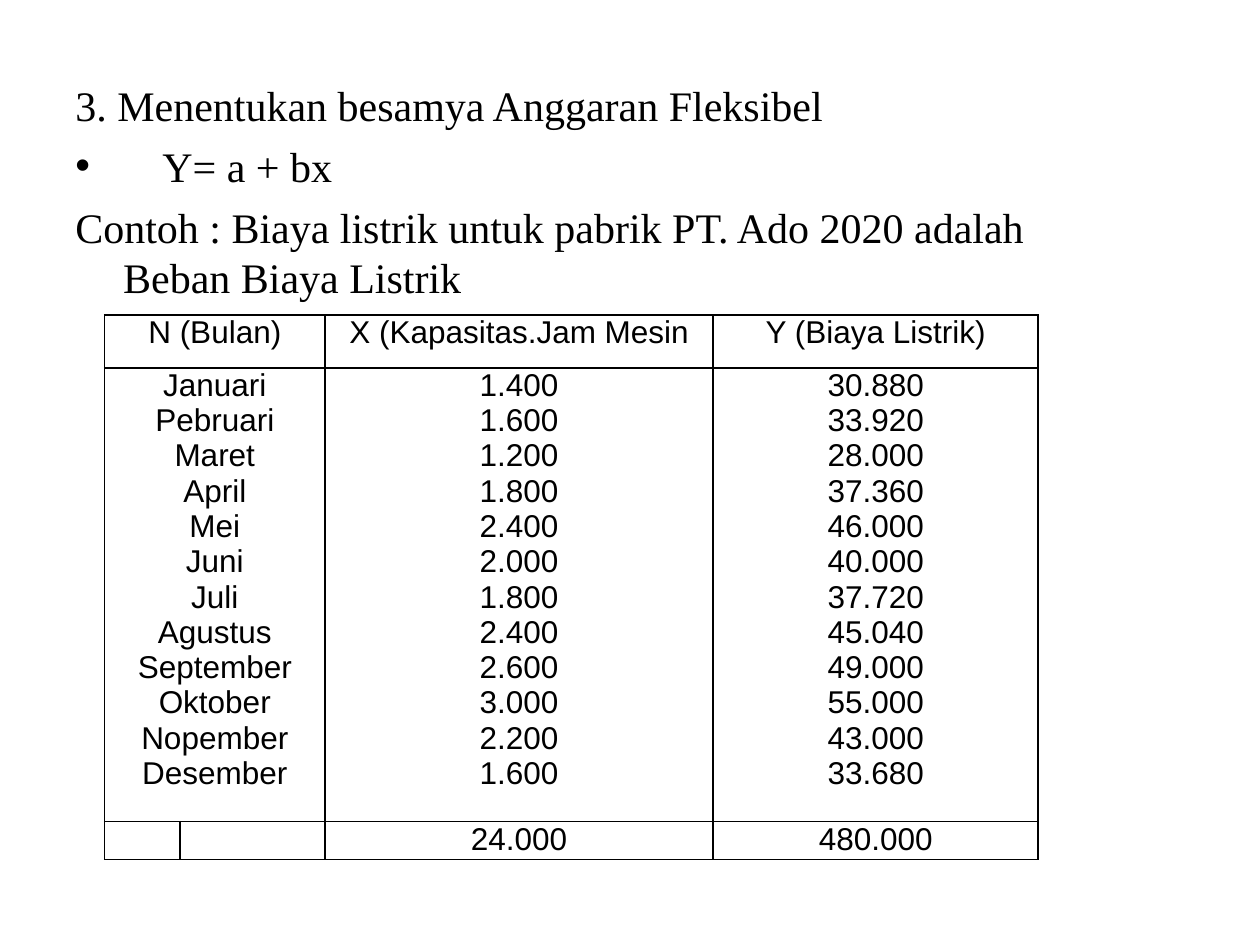
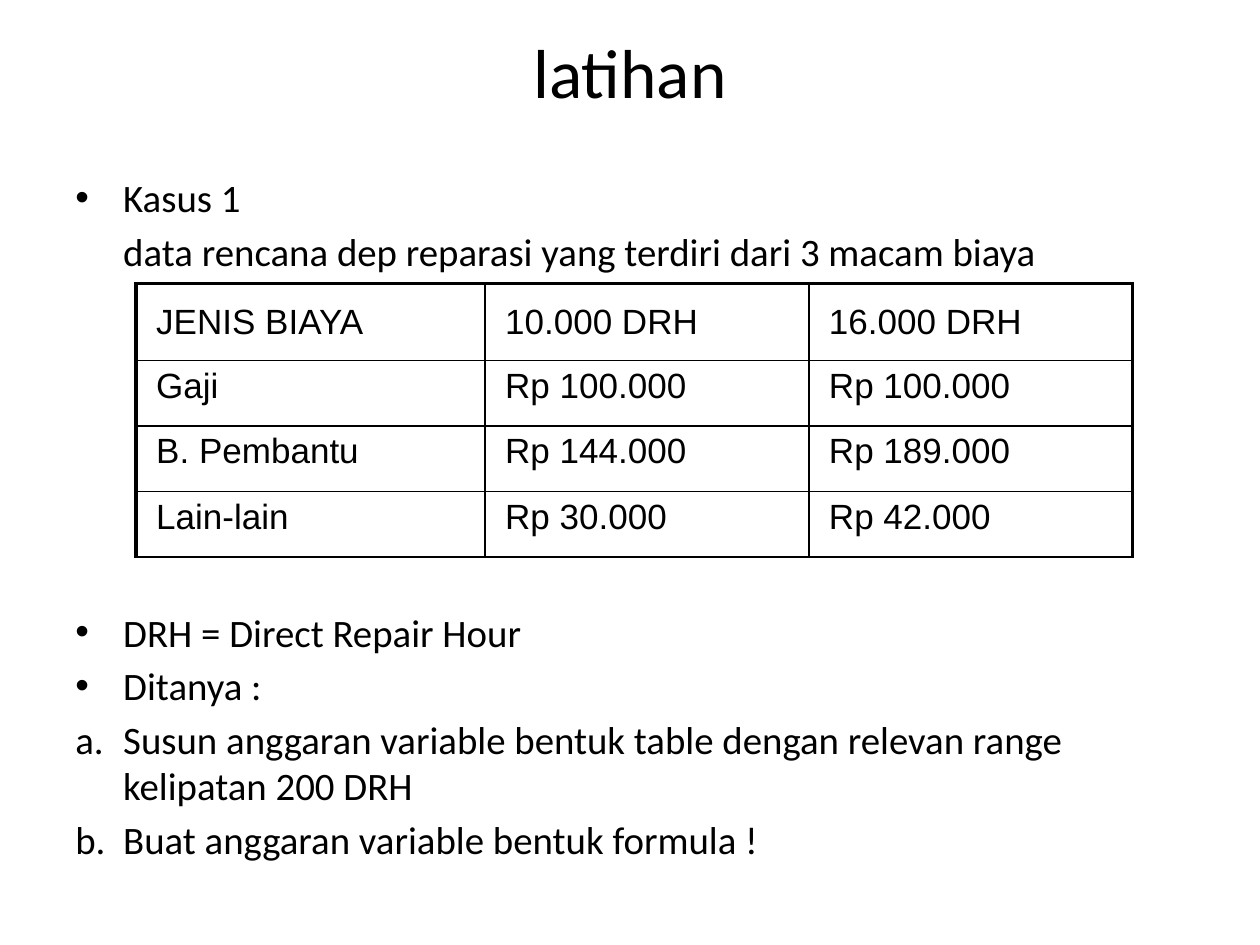
from lxml import etree
from pptx import Presentation
from pptx.dml.color import RGBColor
from pptx.enum.text import MSO_ANCHOR, PP_ALIGN
from pptx.oxml.ns import qn
from pptx.util import Inches, Pt

# Content: each body line is (text, bulleted, left margin, space before)
BUDGET_LINES = [
    ("3. Menentukan besamya Anggaran Fleksibel", False, 0.38, 6),
    ("Y= a + bx", True, 0.69, 6),
    ("Contoh : Biaya listrik untuk pabrik PT. Ado 2020 adalah\vBeban Biaya Listrik", False, 0.38, 6),
]
BUDGET_HEADER = ["N (Bulan)", "X (Kapasitas.Jam Mesin", "Y (Biaya Listrik)"]
MONTHS = [
    ("Januari", "1.400", "30.880"),
    ("Pebruari", "1.600", "33.920"),
    ("Maret", "1.200", "28.000"),
    ("April", "1.800", "37.360"),
    ("Mei", "2.400", "46.000"),
    ("Juni", "2.000", "40.000"),
    ("Juli", "1.800", "37.720"),
    ("Agustus", "2.400", "45.040"),
    ("September", "2.600", "49.000"),
    ("Oktober", "3.000", "55.000"),
    ("Nopember", "2.200", "43.000"),
    ("Desember", "1.600", "33.680"),
]
TOTALS = ["24.000", "480.000"]

EXERCISE_TITLE = "latihan"
TABLE_GAP = 191  # points left free for the cost table
EXERCISE_LINES = [
    ("Kasus 1", True, 0.38, 4),
    ("\tdata rencana dep reparasi yang terdiri dari 3 macam biaya", False, 0.38, 4),
    ("DRH = Direct Repair Hour", True, 0.38, TABLE_GAP),
    ("Ditanya :", True, 0.38, 4),
    ("a.\tSusun anggaran variable bentuk table dengan relevan range kelipatan 200 DRH", False, 0.38, 4),
    ("b.\tBuat anggaran variable bentuk formula !", False, 0.38, 4),
]
COSTS = [
    ("JENIS BIAYA", "10.000 DRH", "16.000 DRH"),
    ("Gaji", "Rp 100.000", "Rp 100.000"),
    ("B. Pembantu", "Rp 144.000", "Rp 189.000"),
    ("Lain-lain", "Rp 30.000", "Rp 42.000"),
]

# Shared style
BLACK = RGBColor(0x00, 0x00, 0x00)
WHITE = RGBColor(0xFF, 0xFF, 0xFF)
SERIF, SANS, TABLE_FONT = "Times New Roman", "Calibri", "Arial"
CENTER, JUSTIFY = PP_ALIGN.CENTER, PP_ALIGN.JUSTIFY
TOP, MIDDLE = MSO_ANCHOR.TOP, MSO_ANCHOR.MIDDLE
THIN, THICK = 1, 2.25


def style_runs(p, font, size):
    for r in p.runs:
        r.font.name = font
        r.font.size = Pt(size)
        r.font.color.rgb = BLACK


def set_indent(p, margin, hanging):
    pPr = p._p.get_or_add_pPr()
    pPr.set("marL", str(Inches(margin)))
    pPr.set("indent", str(-Inches(hanging)))
    return pPr


def add_text(slide, left, top, width, height):
    sp = slide.shapes.add_textbox(Inches(left), Inches(top), Inches(width), Inches(height))
    sp.text_frame.word_wrap = True
    return sp.text_frame


def add_body(slide, top, height, lines, font, size):
    tf = add_text(slide, 0.5, top, 9, height)
    for i, (text, bulleted, margin, before) in enumerate(lines):
        p = tf.paragraphs[0] if i == 0 else tf.add_paragraph()
        p.text = text
        p.space_before = Pt(before)
        style_runs(p, font, size)
        pPr = set_indent(p, margin, margin)
        if bulleted:
            etree.SubElement(pPr, qn("a:buFont")).set("typeface", "Arial")
            etree.SubElement(pPr, qn("a:buChar")).set("char", "•")


def set_borders(cell, widths):
    """Widths are points for left, right, top and bottom."""
    tcPr = cell._tc.get_or_add_tcPr()
    for i, (side, width) in enumerate(zip("LRTB", widths)):
        ln = etree.Element(qn(f"a:ln{side}"), w=str(Pt(width)))
        fill = etree.SubElement(ln, qn("a:solidFill"))
        etree.SubElement(fill, qn("a:srgbClr")).set("val", str(BLACK))
        tcPr.insert(i, ln)


def add_grid(slide, left, top, cols, rows):
    frame = slide.shapes.add_table(
        len(rows), len(cols), Inches(left), Inches(top), Inches(sum(cols)), Inches(sum(rows)))
    table = frame.table
    table.first_row = table.horz_banding = False
    for column, width in zip(table.columns, cols):
        column.width = Inches(width)
    for row, height in zip(table.rows, rows):
        row.height = Inches(height)
    for cell in table.iter_cells():
        cell.fill.background()
    return table


def fill_cell(cell, text, size, align, anchor=TOP):
    cell.text_frame.text = text
    cell.vertical_anchor = anchor
    for p in cell.text_frame.paragraphs:
        p.alignment = align
        style_runs(p, TABLE_FONT, size)


def add_slide(prs):
    slide = prs.slides.add_slide(prs.slide_layouts[6])
    slide.background.fill.solid()
    slide.background.fill.fore_color.rgb = WHITE
    return slide


def build_budget(prs):
    s = add_slide(prs)
    add_body(s, 0.58, 6.12, BUDGET_LINES, SERIF, 24)

    # Monthly table: the month column spans two, the totals row does not
    table = add_grid(s, 0.83, 2.5, [0.6, 1.15, 3.08, 2.58], [0.42, 3.33, 0.29])
    for cell in table.iter_cells():
        set_borders(cell, [THIN] * 4)
        cell.margin_left = cell.margin_right = Inches(0.07)
        cell.margin_top = cell.margin_bottom = 0
    for row in (0, 1):
        table.cell(row, 0).merge(table.cell(row, 1))
    columns = ["\n".join(values) for values in zip(*MONTHS)]
    for col, header, values in zip((0, 2, 3), BUDGET_HEADER, columns):
        fill_cell(table.cell(0, col), header, 18, CENTER)
        fill_cell(table.cell(1, col), values, 18, CENTER)
    for col, total in enumerate(TOTALS, start=2):
        fill_cell(table.cell(2, col), total, 18, CENTER)


def build_exercise(prs):
    s = add_slide(prs)
    tf = add_text(s, 0.5, 0.3, 9, 0.53)
    tf.vertical_anchor = MIDDLE
    p = tf.paragraphs[0]
    p.text = EXERCISE_TITLE
    p.alignment = CENTER
    style_runs(p, SANS, 39.6)
    add_body(s, 1.33, 5.37, EXERCISE_LINES, SANS, 22.2)

    # Cost table with a thick frame on the left, top and right
    table = add_grid(s, 1.08, 2.25, [2.77, 2.57, 2.57], [0.61] + [0.52] * 3)
    for i, costs in enumerate(COSTS):
        for j, text in enumerate(costs):
            cell = table.cell(i, j)
            fill_cell(cell, text, 20, JUSTIFY, MIDDLE if i == 0 else TOP)
            p = cell.text_frame.paragraphs[0]
            p.space_after = Pt(10)
            set_indent(p, 0.25, 0.19)
            set_borders(cell, [THICK if j == 0 else THIN, THICK if j == 2 else THIN,
                               THICK if i == 0 else THIN, THIN])


def main():
    prs = Presentation()
    prs.slide_width, prs.slide_height = Inches(10), Inches(7.5)
    build_budget(prs)
    build_exercise(prs)
    prs.save("out.pptx")


if __name__ == "__main__":
    main()
